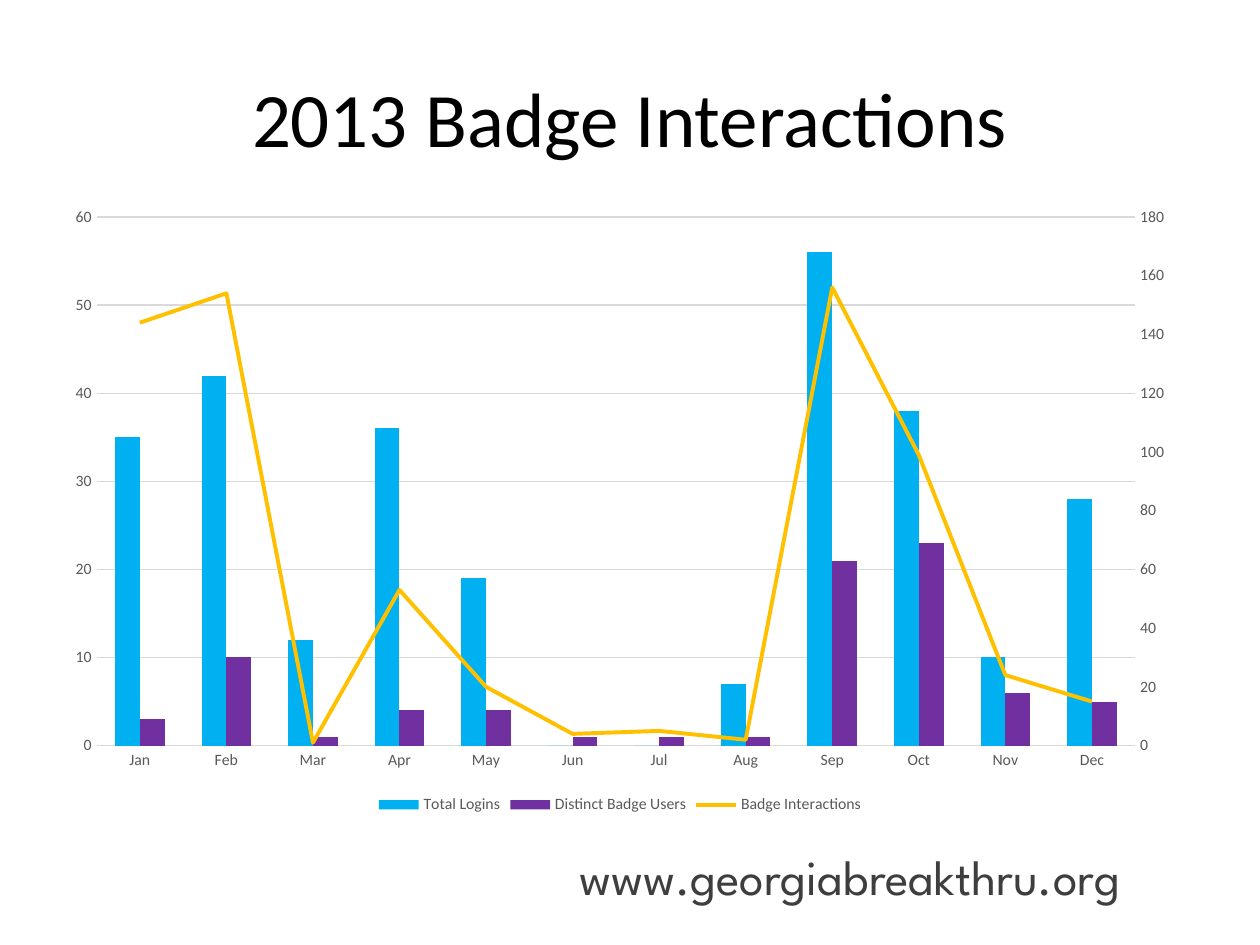
from copy import deepcopy

from lxml.etree import SubElement
from pptx import Presentation
from pptx.chart.data import CategoryChartData
from pptx.dml.color import RGBColor
from pptx.enum.chart import XL_CHART_TYPE, XL_LEGEND_POSITION, XL_MARKER_STYLE, XL_TICK_MARK
from pptx.enum.text import MSO_ANCHOR, PP_ALIGN
from pptx.oxml.ns import qn
from pptx.util import Inches, Pt

COLORS = {"title": "000000", "url": "3E3E3E", "label": "595959", "grid": "D9D9D9",
          "logins": "00B0F0", "users": "7030A0", "interactions": "FFC000"}
MONTHS = ["Jan", "Feb", "Mar", "Apr", "May", "Jun", "Jul", "Aug", "Sep", "Oct", "Nov", "Dec"]
SERIES = {
    "Total Logins": [35, 42, 12, 36, 19, 0, 0, 7, 56, 38, 10, 28],
    "Distinct Badge Users": [3, 10, 1, 4, 4, 1, 1, 1, 21, 23, 6, 5],
    "Badge Interactions": [144, 154, 1, 53, 20, 4, 5, 2, 156, 99, 24, 15],
}


def rgb(name):
    """Return the named colour."""
    return RGBColor.from_string(COLORS[name])


def style_font(font, size, color, name="Calibri"):
    """Set the face, size and colour of a font."""
    for key, value in {"name": name, "size": Pt(size)}.items():
        setattr(font, key, value)
    font.color.rgb = rgb(color)


def style_line(line, color, width):
    """Set the colour and width of a line."""
    line.color.rgb = rgb(color)
    line.width = Pt(width)


def add_text(slide, box, text, size, color, font, **frame):
    """Add a text box holding one styled paragraph and return the paragraph."""
    tf = slide.shapes.add_textbox(*map(Inches, box)).text_frame
    for key, value in {"word_wrap": True, **frame}.items():
        setattr(tf, key, value)
    p = tf.paragraphs[0]
    r = p.add_run()
    r.text = text
    style_font(r.font, size, color, font)
    return p


def style_axes(chart):
    """Format the category axis and the left value axis."""
    for axis in (chart.category_axis, chart.value_axis):
        axis.major_tick_mark = axis.minor_tick_mark = XL_TICK_MARK.NONE
        style_font(axis.tick_labels.font, 9, "label")
    style_line(chart.category_axis.format.line, "grid", 0.75)
    axis = chart.value_axis
    for key, value in {"minimum_scale": 0, "maximum_scale": 60, "major_unit": 10}.items():
        setattr(axis, key, value)
    axis.format.line.fill.background()
    style_line(axis.major_gridlines.format.line, "grid", 0.75)


def remove_children(parent, tag):
    """Remove every child that has the given tag."""
    for child in parent.findall(qn(tag)):
        parent.remove(child)


def add_right_axes(plot_area):
    """Add a hidden category axis and a right value axis, and return their ids."""
    cat, val = (deepcopy(plot_area.find(qn(tag))) for tag in ("c:catAx", "c:valAx"))
    cat_id, val_id = "50010", "50020"
    remove_children(val, "c:majorGridlines")
    changes = [
        (cat, {"c:axId": cat_id, "c:crossAx": val_id, "c:delete": "1"}),
        (val, {"c:axId": val_id, "c:crossAx": cat_id, "c:axPos": "r",
               "c:crosses": "max", "c:majorUnit": "20", "c:max": "180"}),
    ]
    for axis, values in changes:
        for tag, value in values.items():
            next(axis.iter(qn(tag))).set("val", value)
    plot_area.find(qn("c:valAx")).addnext(val)
    val.addnext(cat)
    return cat_id, val_id


def move_to_line(chart):
    """Turn the last bar series into a line on the right axis."""
    plot_area = next(chart._chartSpace.iter(qn("c:plotArea")))
    bars = plot_area.find(qn("c:barChart"))
    ser = bars.findall(qn("c:ser"))[-1]
    remove_children(ser, "c:invertIfNegative")
    line = SubElement(plot_area, qn("c:lineChart"))
    bars.addnext(line)
    SubElement(line, qn("c:grouping")).set("val", "standard")
    SubElement(line, qn("c:varyColors")).set("val", "0")
    line.append(ser)
    SubElement(line, qn("c:marker")).set("val", "1")
    for axis_id in add_right_axes(plot_area):
        SubElement(line, qn("c:axId")).set("val", axis_id)


def add_badge_chart(slide):
    """Add the monthly columns with the interactions line."""
    data = CategoryChartData()
    data.categories = MONTHS
    for name, values in SERIES.items():
        data.add_series(name, values)
    box = map(Inches, (0.42, 1.55, 9, 4.95))
    chart = slide.shapes.add_chart(XL_CHART_TYPE.COLUMN_CLUSTERED, *box, data).chart
    style_font(chart.font, 10, "title")
    chart.has_title = False
    chart.has_legend = True
    chart.legend.position = XL_LEGEND_POSITION.BOTTOM
    chart.legend.include_in_layout = False
    style_font(chart.legend.font, 9, "label")
    style_axes(chart)
    move_to_line(chart)
    columns, line = chart.plots
    for key, value in {"gap_width": 150, "overlap": 0, "vary_by_categories": False}.items():
        setattr(columns, key, value)
    for series, color in zip(columns.series, ("logins", "users")):
        series.format.fill.solid()
        series.format.fill.fore_color.rgb = rgb(color)
    interactions = line.series[0]
    interactions.smooth = False
    interactions.marker.style = XL_MARKER_STYLE.NONE
    style_line(interactions.format.line, "interactions", 2.25)


def main():
    """Build and save the slide."""
    prs = Presentation()
    prs.slide_width, prs.slide_height = Inches(10), Inches(7.5)
    slide = prs.slides.add_slide(prs.slide_layouts[6])
    p = add_text(slide, (0.5, 0.3, 9, 1.25), "2013 Badge Interactions", 44, "title",
                 "Calibri", vertical_anchor=MSO_ANCHOR.MIDDLE)
    p.alignment = PP_ALIGN.CENTER
    add_text(slide, (4.5, 6.67, 5.33, 0.4), "www.georgiabreakthru.org", 28, "url", "League Spartan")
    add_badge_chart(slide)
    prs.save("out.pptx")


if __name__ == "__main__":
    main()
